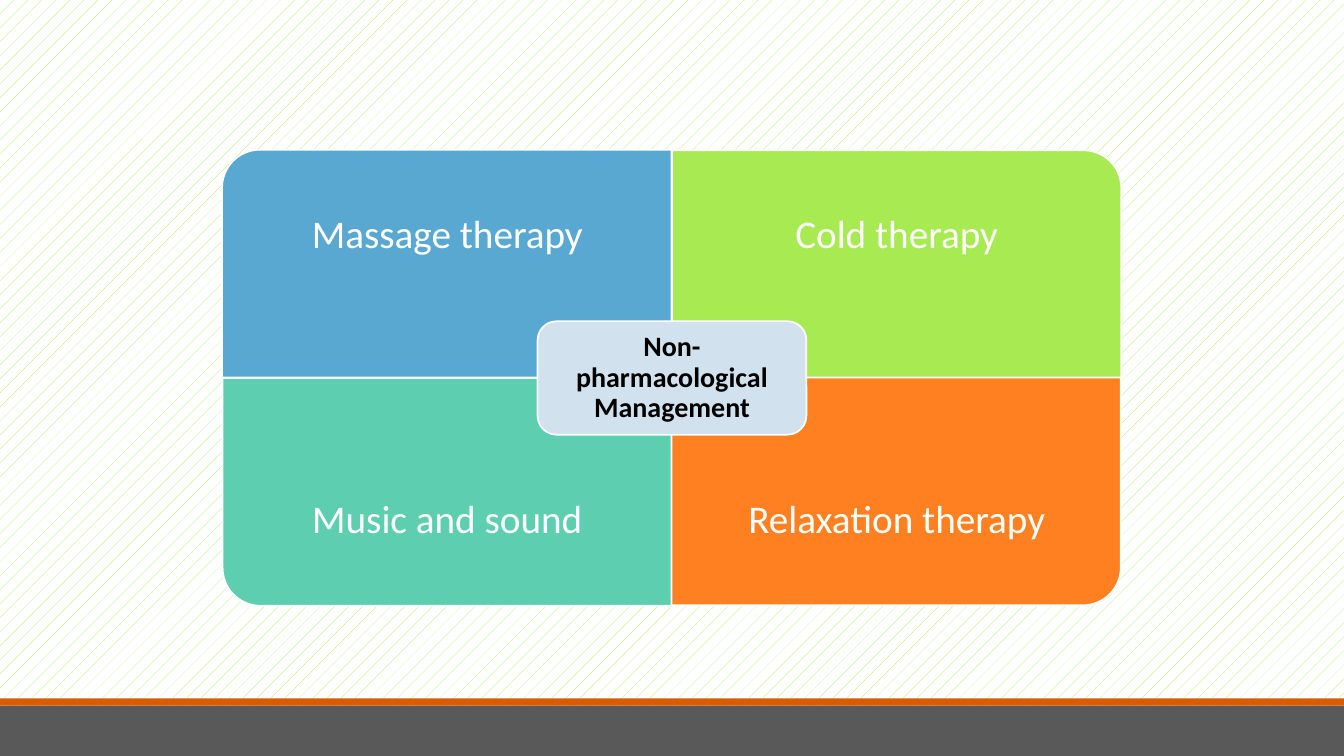
"""Build a slide of four therapies around non-pharmacological management."""
from dataclasses import dataclass

from pptx import Presentation, util as u
from pptx.dml.color import RGBColor
from pptx.enum import dml, shapes, text

PX = 9525
PAGE_W, PAGE_H = 1280, 720
MID_X, MID_Y = PAGE_W // 2, PAGE_H // 2
QUARTER_W, QUARTER_H = 428, 217
LABEL_H = 163
HUB_W, HUB_H = 256, 108
COLORS = {
    "white": "FFFFFF", "black": "000000", "grey": "595959", "rust": "D85C00",
    "blue": "59A8D1", "lime": "A7EA52", "teal": "5DCEAF", "orange": "FF8021",
    "pale": "D1E1EE",
}


@dataclass(frozen=True)
class Bar:
    top: int
    height: int
    color: str


@dataclass(frozen=True)
class Quarter:
    label: str
    color: str
    column: int
    row: int
    turn: int


BARS = [Bar(672, 48, "grey"), Bar(665, 7, "rust")]
QUARTERS = [
    Quarter("Massage therapy", "blue", 0, 0, 270),
    Quarter("Cold therapy", "lime", 1, 0, 0),
    Quarter("Music and sound", "teal", 0, 1, 180),
    Quarter("Relaxation therapy", "orange", 1, 1, 90),
]


def rgb(name: str) -> RGBColor:
    return RGBColor.from_string(COLORS[name])


def px(*lengths: int) -> list[int]:
    return [length * PX for length in lengths]


def add_panel(page, kind, left: int, top: int, width: int, height: int,
              color: str, outlined: bool = True):
    panel = page.shapes.add_shape(kind, *px(left, top, width, height))
    panel.shadow.inherit = False
    panel.fill.solid()
    panel.fill.fore_color.rgb = rgb(color)
    if outlined:
        panel.line.color.rgb = rgb("white")
        panel.line.width = u.Pt(1.25)
    else:
        panel.line.fill.background()
    return panel


def write(box, words: str, size: int, color: str, inset: int, bold: bool = False) -> None:
    frame = box.text_frame
    frame.word_wrap = True
    frame.vertical_anchor = text.MSO_ANCHOR.MIDDLE
    frame.margin_left = frame.margin_right = inset * PX
    frame.margin_top = frame.margin_bottom = inset * PX
    para = frame.paragraphs[0]
    para.alignment = text.PP_ALIGN.CENTER
    para.line_spacing = 0.9
    span = para.add_run()
    span.text = words
    span.font.name = "Calibri"
    span.font.size = u.Pt(size)
    span.font.bold = bold
    span.font.color.rgb = rgb(color)


def add_bar(page, bar: Bar) -> None:
    add_panel(page, shapes.MSO_SHAPE.RECTANGLE, 0, bar.top, PAGE_W, bar.height,
              bar.color, outlined=False)


def add_quarter(page, quarter: Quarter) -> None:
    left = MID_X - QUARTER_W * (1 - quarter.column)
    top = MID_Y - QUARTER_H * (1 - quarter.row)
    upright = quarter.turn % 180 != 0
    width, height = (QUARTER_H, QUARTER_W) if upright else (QUARTER_W, QUARTER_H)
    panel = add_panel(page, shapes.MSO_SHAPE.ROUND_1_RECTANGLE,
                      left + (QUARTER_W - width) // 2, top + (QUARTER_H - height) // 2,
                      width, height, quarter.color)
    panel.rotation = quarter.turn
    label_top = top + quarter.row * (QUARTER_H - LABEL_H)
    box = page.shapes.add_textbox(*px(left, label_top, QUARTER_W, LABEL_H))
    write(box, quarter.label, 28, "white", 21)


def add_hub(page) -> None:
    hub = add_panel(page, shapes.MSO_SHAPE.ROUNDED_RECTANGLE, MID_X - HUB_W // 2,
                    MID_Y - HUB_H // 2, HUB_W, HUB_H, "pale")
    write(hub, "Non-pharmacological Management", 20, "black", 8, bold=True)


def main() -> None:
    deck = Presentation()
    deck.slide_width, deck.slide_height = px(PAGE_W, PAGE_H)
    page = deck.slides.add_slide(deck.slide_layouts[6])
    backdrop = page.background.fill
    backdrop.patterned()
    backdrop.pattern = dml.MSO_PATTERN.PERCENT_5
    backdrop.fore_color.rgb = rgb("lime")
    backdrop.back_color.rgb = rgb("white")
    for bar in BARS:
        add_bar(page, bar)
    for quarter in QUARTERS:
        add_quarter(page, quarter)
    add_hub(page)
    deck.save("out.pptx")


if __name__ == "__main__":
    main()
